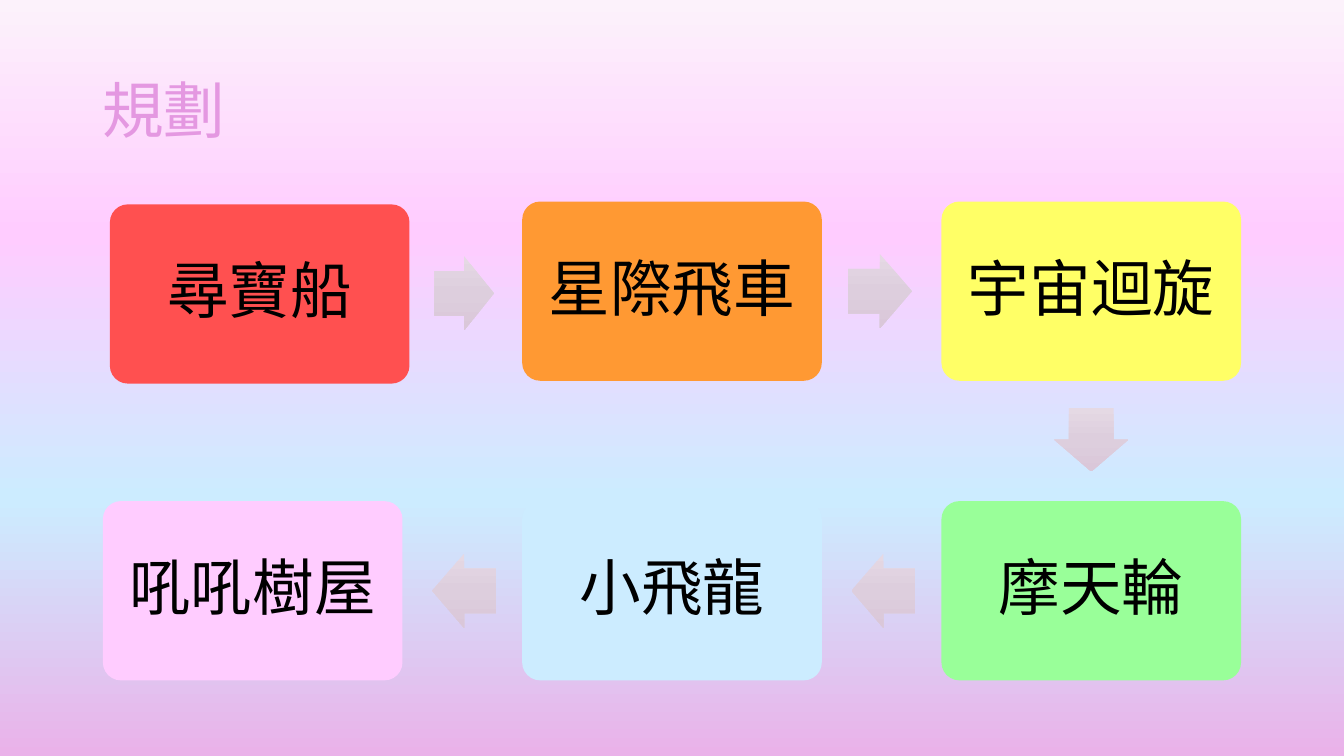
from copy import deepcopy

from lxml import etree
from pptx import Presentation
from pptx import util as u
from pptx.dml.color import RGBColor
from pptx.enum import shapes, text
from pptx.oxml.ns import qn

ORCHID = RGBColor(0xE4, 0x98, 0xE1)
BLACK = RGBColor(0, 0, 0)
RED = RGBColor(0xFF, 0x50, 0x50)
ORANGE = RGBColor(0xFF, 0x99, 0x33)
YELLOW = RGBColor(0xFF, 0xFF, 0x66)
GREEN = RGBColor(0x99, 0xFF, 0x99)
SKY = RGBColor(0xCC, 0xEC, 0xFF)
PINK = RGBColor(0xFF, 0xCC, 0xFF)
PAGE_STOPS = [(0, RGBColor(0xFC, 0xF2, 0xFB)), (0.31, PINK), (0.66, SKY),
              (1, RGBColor(0xEA, 0xB2, 0xE9))]
ARROW_STOPS = [(0, RGBColor(0xE5, 0xD9, 0xE4)), (0.5, RGBColor(0xDD, 0xCE, 0xDD)),
               (1, RGBColor(0xDA, 0xC7, 0xD9))]

CJK_FONT = "Noto Sans CJK JP"
BOX_WIDTH, BOX_HEIGHT = 214, 128
ARROW_LENGTH, ARROW_BREADTH = 45.5, 53
COLUMNS = [73.5 + 299.5 * column for column in range(3)]
TOP_ROW, BOTTOM_ROW = 144, 358
TOP_MIDDLE, BOTTOM_MIDDLE = (row + BOX_HEIGHT / 2 for row in (TOP_ROW, BOTTOM_ROW))

RIGHT = shapes.MSO_SHAPE.RIGHT_ARROW
DOWN = shapes.MSO_SHAPE.DOWN_ARROW
LEFT = shapes.MSO_SHAPE.LEFT_ARROW


def write(box, words, *, color=BLACK, font=CJK_FONT, size=44,
          align=text.PP_ALIGN.CENTER, inset=7.2):
    frame = box.text_frame
    frame.word_wrap = True
    frame.vertical_anchor = text.MSO_ANCHOR.MIDDLE
    frame.margin_left = frame.margin_right = u.Pt(inset)
    para = frame.paragraphs[0]
    para.alignment = align
    para.line_spacing = 0.9
    span = para.add_run()
    span.text = words
    span.font.size = u.Pt(size)
    span.font.color.rgb = color
    span.font.name = font
    etree.SubElement(span.font._element, qn("a:ea"), typeface=CJK_FONT)


def fill_downward(owner, fill, stops):
    """Fill a shape or page background with a top-to-bottom gradient."""
    fill.gradient()
    fill.gradient_angle = 270
    stop_list = owner.element.find(".//" + qn("a:gsLst"))
    while len(stop_list) < len(stops):
        stop_list.append(deepcopy(stop_list[0]))
    for stop, (position, color) in zip(fill.gradient_stops, stops):
        stop.position = position
        stop.color.rgb = color


class RoutePage:
    def __init__(self, deck):
        self.page = deck.slides.add_slide(deck.slide_layouts[6])
        fill_downward(self.page, self.page.background.fill, PAGE_STOPS)

    def shape(self, kind, left, top, width, height):
        shape = self.page.shapes.add_shape(
            kind, u.Pt(left), u.Pt(top), u.Pt(width), u.Pt(height))
        shape.shadow.inherit = False
        shape.line.fill.background()
        return shape

    def title(self, words):
        box = self.page.shapes.add_textbox(u.Pt(66), u.Pt(29), u.Pt(828), u.Pt(104))
        write(box, words, color=ORCHID, align=text.PP_ALIGN.LEFT)

    def stop(self, words, left, top, color, font=CJK_FONT):
        box = self.shape(shapes.MSO_SHAPE.ROUNDED_RECTANGLE,
                         left, top, BOX_WIDTH, BOX_HEIGHT)
        box.adjustments[0] = 0.1
        box.fill.solid()
        box.fill.fore_color.rgb = color
        write(box, words, font=font)

    def arrow(self, kind, center, middle, length=ARROW_LENGTH):
        width, height = length, ARROW_BREADTH
        if kind == DOWN:
            width, height = height, width
        arrow = self.shape(kind, center - width / 2, middle - height / 2, width, height)
        arrow.adjustments[0] = 0.6
        arrow.adjustments[1] = 0.5
        fill_downward(arrow, arrow.fill, ARROW_STOPS)


def main():
    deck = Presentation()
    deck.slide_width, deck.slide_height = u.Pt(960), u.Pt(540)
    route = RoutePage(deck)
    route.title("規劃")

    first, second, third = COLUMNS
    route.stop("尋寶船", first + 5, TOP_ROW + 2, RED)
    route.arrow(RIGHT, 331.5, TOP_MIDDLE + 1.5, length=42.5)
    route.stop("星際飛車", second, TOP_ROW, ORANGE)
    route.arrow(RIGHT, 628.5, TOP_MIDDLE)
    route.stop("宇宙迴旋", third, TOP_ROW, YELLOW)
    route.arrow(DOWN, third + BOX_WIDTH / 2, 314)
    route.stop("摩天輪", third, BOTTOM_ROW, GREEN)
    route.arrow(LEFT, 631, BOTTOM_MIDDLE)
    route.stop("小飛龍", second, BOTTOM_ROW, SKY, font="Calibri")
    route.arrow(LEFT, 331.5, BOTTOM_MIDDLE)
    route.stop("吼吼樹屋", first, BOTTOM_ROW, PINK, font="Calibri")
    deck.save("out.pptx")


if __name__ == "__main__":
    main()
